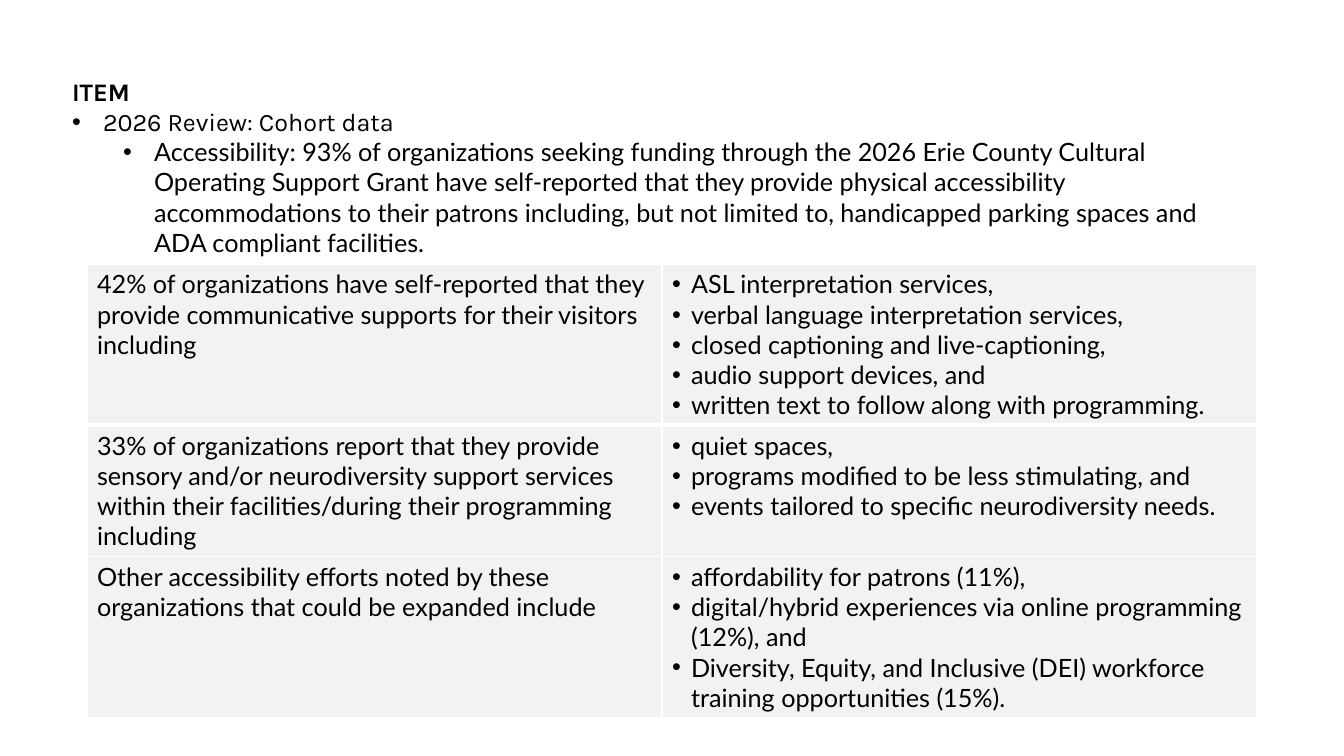
from lxml import etree
from pptx import Presentation
from pptx.dml.color import RGBColor
from pptx.enum.text import MSO_ANCHOR, MSO_AUTO_SIZE, PP_ALIGN
from pptx.oxml.ns import qn
from pptx.util import Pt

TOP = MSO_ANCHOR.TOP
NO_AUTOFIT = MSO_AUTO_SIZE.NONE
LEFT = PP_ALIGN.LEFT

# text, font, bold, level, left margin, hanging indent
AGENDA = [
    ("ITEM", "Karla", True, 0, 0, 0),
    ("2026 Review: Cohort data", "Karla", False, 0, 31, 31),
    ("Accessibility: 93% of organizations seeking funding through the 2026 "
     "Erie County Cultural Operating Support Grant have self-reported that "
     "they provide physical accessibility accommodations to their patrons "
     "including, but not limited to, handicapped parking spaces and ADA "
     "compliant facilities.", "Lato", False, 1, 82, 31),
]
# finding, supports, lines of text in the row
FINDINGS = [
    ("42% of organizations have self-reported that they provide "
     "communicative supports for their visitors including",
     ["ASL interpretation services,",
      "verbal language interpretation services,",
      "closed captioning and live-captioning,",
      "audio support devices, and",
      "written text to follow along with programming."], 5),
    ("33% of organizations report that they provide sensory and/or "
     "neurodiversity support services within their facilities/during their "
     "programming including",
     ["quiet spaces,",
      "programs modified to be less stimulating, and",
      "events tailored to specific neurodiversity needs."], 4),
    ("Other accessibility efforts noted by these organizations that could "
     "be expanded include",
     ["affordability for patrons (11%),",
      "digital/hybrid experiences via online programming (12%), and",
      "Diversity, Equity, and Inclusive (DEI) workforce training "
      "opportunities (15%)."], 5),
]
COLUMN_WIDTHS = [575, 595]
LINE_HEIGHT, ROW_PADDING = 30, 11
TEXT_SIZE = 18
BLACK, WHITE, PALE_GRAY = "000000", "FFFFFF", "F2F2F2"


def px(length):
    return round(length * 914400 / 100.8)


def color(value):
    return RGBColor.from_string(value)


def write_paragraph(paragraph, text, font="Lato", bold=False, margin=0, hanging=0):
    """Fill a paragraph; a hanging indent gives it a round bullet."""
    paragraph.text = text
    paragraph.alignment = LEFT
    paragraph.space_before = paragraph.space_after = Pt(0)
    properties = paragraph._p.get_or_add_pPr()
    properties.set("marL", str(px(margin)))
    properties.set("indent", str(-px(hanging)))
    if hanging:
        etree.SubElement(properties, qn("a:buFont")).set("typeface", "Arial")
        etree.SubElement(properties, qn("a:buChar")).set("char", "•")
    else:
        etree.SubElement(properties, qn("a:buNone"))
    paragraph.font.name = font
    paragraph.font.size = Pt(TEXT_SIZE)
    paragraph.font.bold = bold
    paragraph.font.color.rgb = color(BLACK)


def next_paragraph(frame, index):
    return frame.add_paragraph() if index else frame.paragraphs[0]


def style_cell(cell, top, bottom):
    """Give a cell its fill and white borders, top and bottom in points."""
    properties = cell._tc.get_or_add_tcPr()
    for side, width in (("L", 1), ("R", 1), ("T", top), ("B", bottom)):
        line = etree.SubElement(properties, qn(f"a:ln{side}"), w=str(Pt(width)))
        fill = etree.SubElement(line, qn("a:solidFill"))
        etree.SubElement(fill, qn("a:srgbClr"), val=WHITE)
    cell.fill.solid()
    cell.fill.fore_color.rgb = color(PALE_GRAY)


def add_agenda(slide):
    title, body = slide.placeholders
    title._element.getparent().remove(title._element)
    body.left, body.top, body.width, body.height = map(px, (62, 71, 1159, 193))
    frame = body.text_frame
    frame.word_wrap = True
    frame.auto_size = NO_AUTOFIT
    frame.vertical_anchor = TOP
    for index, (text, font, bold, level, margin, hanging) in enumerate(AGENDA):
        paragraph = next_paragraph(frame, index)
        paragraph.level = level
        write_paragraph(paragraph, text, font, bold, margin, hanging)


def add_findings(slide):
    heights = [lines * LINE_HEIGHT + ROW_PADDING for _, _, lines in FINDINGS]
    table = slide.shapes.add_table(
        len(FINDINGS), len(COLUMN_WIDTHS), px(87), px(264),
        px(sum(COLUMN_WIDTHS)), px(sum(heights))).table
    table.first_row = table.horz_banding = False
    for column, width in zip(table.columns, COLUMN_WIDTHS):
        column.width = px(width)
    for index, (finding, supports, _) in enumerate(FINDINGS):
        table.rows[index].height = px(heights[index])
        finding_cell, supports_cell = table.rows[index].cells
        write_paragraph(finding_cell.text_frame.paragraphs[0], finding)
        for position, support in enumerate(supports):
            paragraph = next_paragraph(supports_cell.text_frame, position)
            write_paragraph(paragraph, support, margin=19, hanging=19)
        for cell in (finding_cell, supports_cell):
            style_cell(cell, top=3 if index == 1 else 1, bottom=3 if index == 0 else 1)


def main():
    presentation = Presentation()
    presentation.slide_width, presentation.slide_height = px(1344), px(756)
    slide = presentation.slides.add_slide(presentation.slide_layouts[1])
    add_agenda(slide)
    add_findings(slide)
    presentation.save("out.pptx")


if __name__ == "__main__":
    main()
